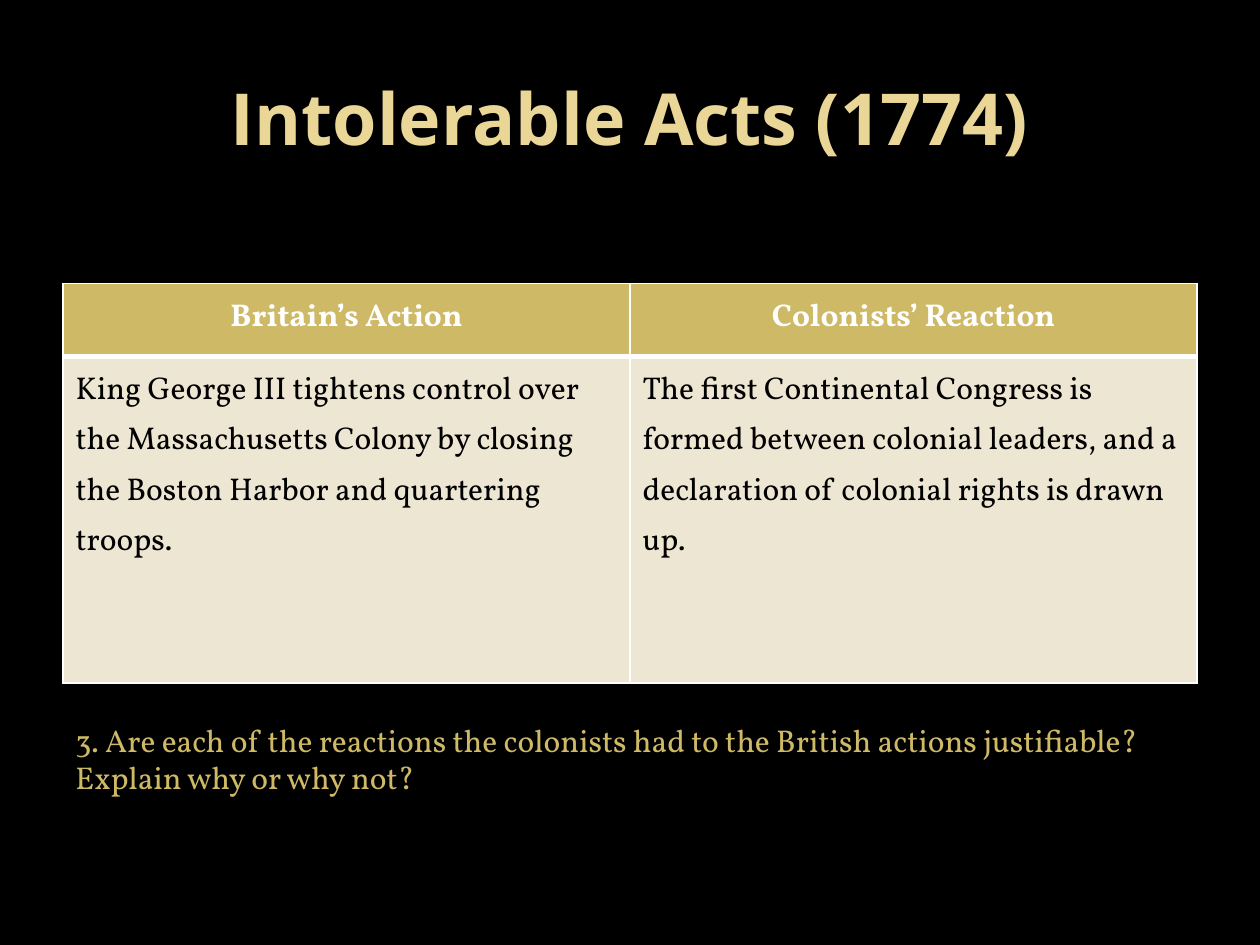
from lxml.etree import SubElement
from pptx import Presentation
from pptx.dml.color import RGBColor
from pptx.enum.text import MSO_ANCHOR, MSO_AUTO_SIZE, PP_ALIGN
from pptx.oxml.ns import qn
from pptx.util import Inches, Pt

UNIT = 0.5  # inches per grid column and row
COLUMNS, ROWS = 20, 15
MARGIN, CONTENT_WIDTH = 1, 18


def color(value):
    return RGBColor.from_string(value)


def grid(*units):
    return [Inches(unit * UNIT) for unit in units]


def write(frame, text, *, font="Vollkorn", size=18, fill="000000", bold=False,
          align=PP_ALIGN.LEFT, spacing=None):
    frame.word_wrap = True
    para = frame.paragraphs[0]
    para.alignment = align
    if spacing:
        para.line_spacing = spacing
    span = para.add_run()
    span.text = text
    span.font.name, span.font.size, span.font.bold = font, Pt(size), bold
    span.font.color.rgb = color(fill)


def outline(cell, top, bottom, line="FFFFFF"):
    """Draw the cell's borders; sides are 1 pt, top and bottom as given."""
    properties = cell._tc.get_or_add_tcPr()
    for side, width in zip("LRTB", (1, 1, top, bottom)):
        edge = SubElement(properties, qn(f"a:ln{side}"), w=str(Pt(width)))
        SubElement(SubElement(edge, qn("a:solidFill")), qn("a:srgbClr"), val=line)


class SlideBuilder:
    gold, cream, pale_gold = "CEB966", "EDE6D3", "EAD696"

    def __init__(self, deck):
        self.page = deck.slides.add_slide(deck.slide_layouts[5])
        background = self.page.background.fill
        background.solid()
        background.fore_color.rgb = color("000000")

    def title(self, text, top, height):
        box = self.page.shapes.title
        box.left, box.top, box.width, box.height = grid(MARGIN, top, CONTENT_WIDTH, height)
        box.text_frame.vertical_anchor = MSO_ANCHOR.MIDDLE
        write(box.text_frame, text, font="Open Sans", size=41, bold=True,
              fill=self.pale_gold, align=PP_ALIGN.CENTER)

    def table(self, rows, top, heights):
        """Place a table of equal columns whose first row is the header."""
        table = self.page.shapes.add_table(
            len(rows), len(rows[0]), *grid(MARGIN, top, CONTENT_WIDTH, sum(heights))).table
        for row, height in zip(table.rows, grid(*heights)):
            row.height = height
        header = dict(fill="FFFFFF", bold=True, align=PP_ALIGN.CENTER)
        for r, texts in enumerate(rows):
            for c, text in enumerate(texts):
                cell = table.cell(r, c)
                outline(cell, top=3 if r == 1 else 1, bottom=3 if r == 0 else 1)
                cell.fill.solid()
                cell.fill.fore_color.rgb = color(self.cream if r else self.gold)
                write(cell.text_frame, text, spacing=1.15, **({} if r else header))

    def question(self, text, top, height):
        box = self.page.shapes.add_textbox(*grid(MARGIN, top, CONTENT_WIDTH, height))
        box.text_frame.auto_size = MSO_AUTO_SIZE.SHAPE_TO_FIT_TEXT
        write(box.text_frame, text, fill=self.gold)


def main():
    deck = Presentation()
    deck.slide_width, deck.slide_height = grid(COLUMNS, ROWS)
    slide = SlideBuilder(deck)
    slide.title("Intolerable Acts (1774)", top=0.6, height=2.5)
    slide.table([
        ("Britain’s Action", "Colonists’ Reaction"),
        ("King George III tightens control over the Massachusetts Colony by closing "
         "the Boston Harbor and quartering troops.",
         "The first Continental Congress is formed between colonial leaders, and a "
         "declaration of colonial rights is drawn up."),
    ], top=4.5, heights=(1.16, 5.18))
    slide.question("3. Are each of the reactions the colonists had to the British actions "
                   "justifiable? Explain why or why not?", top=11.34, height=1.42)
    deck.save("out.pptx")


if __name__ == "__main__":
    main()
